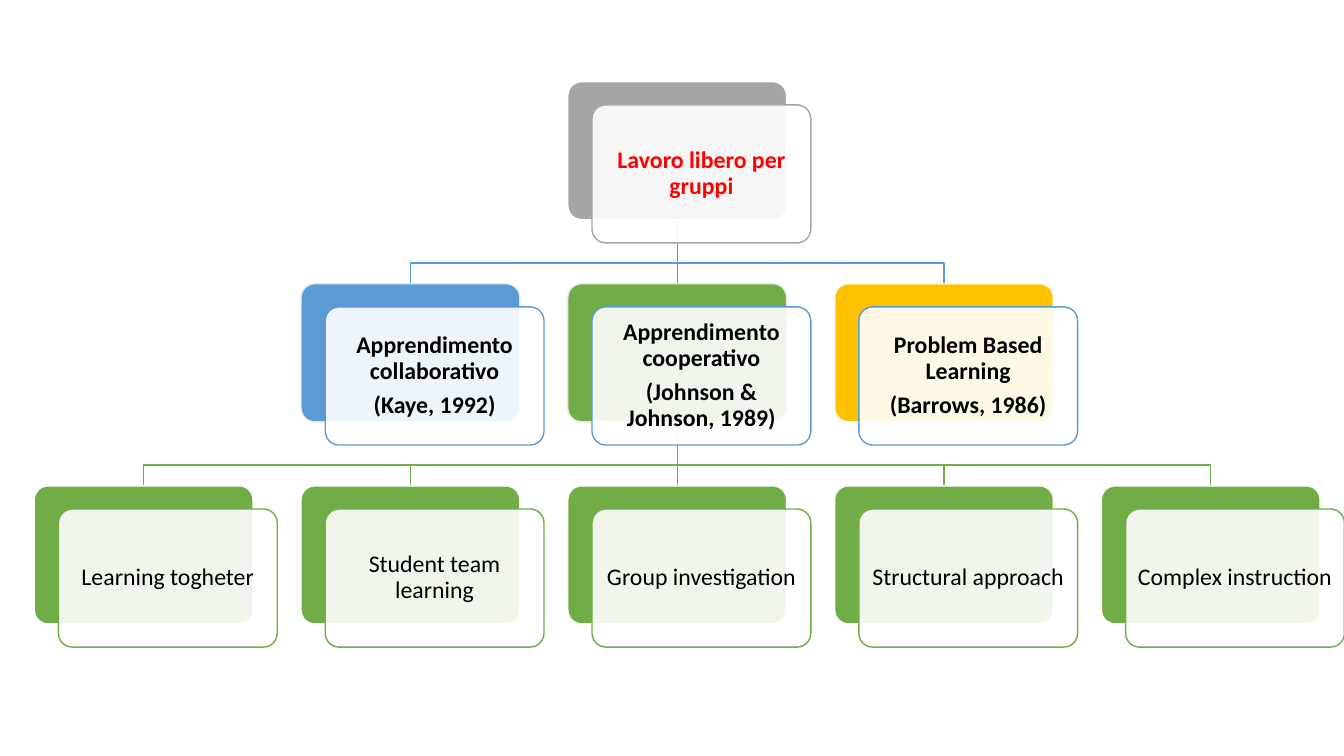
from dataclasses import dataclass

from lxml import etree
from pptx import Presentation
from pptx import util as u
from pptx.dml.color import RGBColor
from pptx.enum import shapes, text
from pptx.oxml.ns import qn

COLORS = {
    "white": "FFFFFF", "black": "000000", "red": "FF0000", "pale": "E7E7E7",
    "gray": "A5A5A5", "blue": "5B9BD5", "green": "70AD47", "gold": "FFC000",
}
SLIDE_W, SLIDE_H = 13.33, 7.5
# Grid of five columns and three rows, in inches
LEFT, TOP = 0.34, 0.81
COL, ROW = 2.646, 2.005
BOX_W, BOX_H = 2.17, 1.37
OFFSET_X, OFFSET_Y = 0.24, 0.23
KNEE = 0.43
INSET = 0.07


@dataclass(frozen=True)
class Node:
    col: int
    row: int
    lines: tuple[str, ...]
    fill: str
    edge: str = "white"
    frame: str = "blue"
    color: str = "black"
    bold: bool = True

    @property
    def left(self) -> float:
        return LEFT + self.col * COL

    @property
    def top(self) -> float:
        return TOP + self.row * ROW

    @property
    def center(self) -> float:
        return self.left + BOX_W / 2


ROOT = Node(2, 0, ("Lavoro libero per gruppi",), "gray", frame="gray", color="red")
COLLABORATIVE = Node(1, 1, ("Apprendimento collaborativo", "(Kaye, 1992)"), "blue", "pale")
COOPERATIVE = Node(2, 1, ("Apprendimento cooperativo", "(Johnson & Johnson, 1989)"), "green", "pale")
PROBLEM_BASED = Node(3, 1, ("Problem Based Learning", "(Barrows, 1986)"), "gold")
APPROACHES = (COLLABORATIVE, COOPERATIVE, PROBLEM_BASED)
METHODS = tuple(
    Node(col, 2, (label,), "green", frame="green", bold=False)
    for col, label in enumerate((
        "Learning togheter", "Student team learning", "Group investigation",
        "Structural approach", "Complex instruction",
    ))
)


def rgb(name: str) -> RGBColor:
    return RGBColor.from_string(COLORS[name])


def draw_link(s, parent: Node, child: Node, color: str) -> None:
    """Draw a straight line to a child below, or a stepped one to the side."""
    start, end = parent.top + BOX_H, child.top
    if parent.col == child.col:
        link = s.shapes.add_connector(
            shapes.MSO_CONNECTOR.STRAIGHT, u.Inches(parent.center), u.Inches(start),
            u.Inches(child.center), u.Inches(end))
        etree.SubElement(link._element.spPr, qn("a:effectLst"))
    else:
        outline = s.shapes.build_freeform(
            u.Inches(parent.center), u.Inches(start))
        steps = ((parent.center, start + KNEE), (child.center, start + KNEE), (child.center, end))
        outline.add_line_segments([(u.Inches(x), u.Inches(y)) for x, y in steps], close=False)
        link = outline.convert_to_shape()
        link.fill.background()
        link.shadow.inherit = False
    link.line.color.rgb = rgb(color)
    link.line.width = u.Pt(1)


def add_card(s, left: float, top: float, fill: str, edge: str):
    sp = s.shapes.add_shape(
        shapes.MSO_SHAPE.ROUNDED_RECTANGLE, u.Inches(left), u.Inches(top),
        u.Inches(BOX_W), u.Inches(BOX_H))
    sp.adjustments[0] = 0.1
    sp.shadow.inherit = False
    sp.fill.solid()
    sp.fill.fore_color.rgb = rgb(fill)
    sp.line.color.rgb = rgb(edge)
    sp.line.width = u.Pt(1)
    return sp


def set_opacity(sp, percent: int) -> None:
    color = sp._element.spPr.find(qn("a:solidFill"))[0]
    etree.SubElement(color, qn("a:alpha"), val=str(percent * 1000))


def draw_node(s, node: Node) -> None:
    """Draw the coloured back card and the translucent labelled front card."""
    add_card(s, node.left, node.top, node.fill, node.edge)
    front = add_card(s, node.left + OFFSET_X, node.top + OFFSET_Y, "white", node.frame)
    set_opacity(front, 90)
    tf = front.text_frame
    tf.word_wrap = True
    tf.vertical_anchor = text.MSO_ANCHOR.MIDDLE
    tf.margin_left = tf.margin_right = tf.margin_top = tf.margin_bottom = u.Inches(INSET)
    for i, line in enumerate(node.lines):
        p = tf.add_paragraph() if i else tf.paragraphs[0]
        p.text = line
        p.alignment = text.PP_ALIGN.CENTER
        p.line_spacing = 0.9
        p.space_after = u.Pt(6)
        p.font.name = "Calibri"
        p.font.size = u.Pt(17)
        p.font.bold = node.bold
        p.font.color.rgb = rgb(node.color)


def main() -> None:
    prs = Presentation()
    prs.slide_width, prs.slide_height = u.Inches(SLIDE_W), u.Inches(SLIDE_H)
    s = prs.slides.add_slide(prs.slide_layouts[6])
    for parent, children, color in ((ROOT, APPROACHES, "blue"), (COOPERATIVE, METHODS, "green")):
        for child in children:
            draw_link(s, parent, child, color)
    for node in (ROOT, *APPROACHES, *METHODS):
        draw_node(s, node)
    prs.save("out.pptx")


if __name__ == "__main__":
    main()
